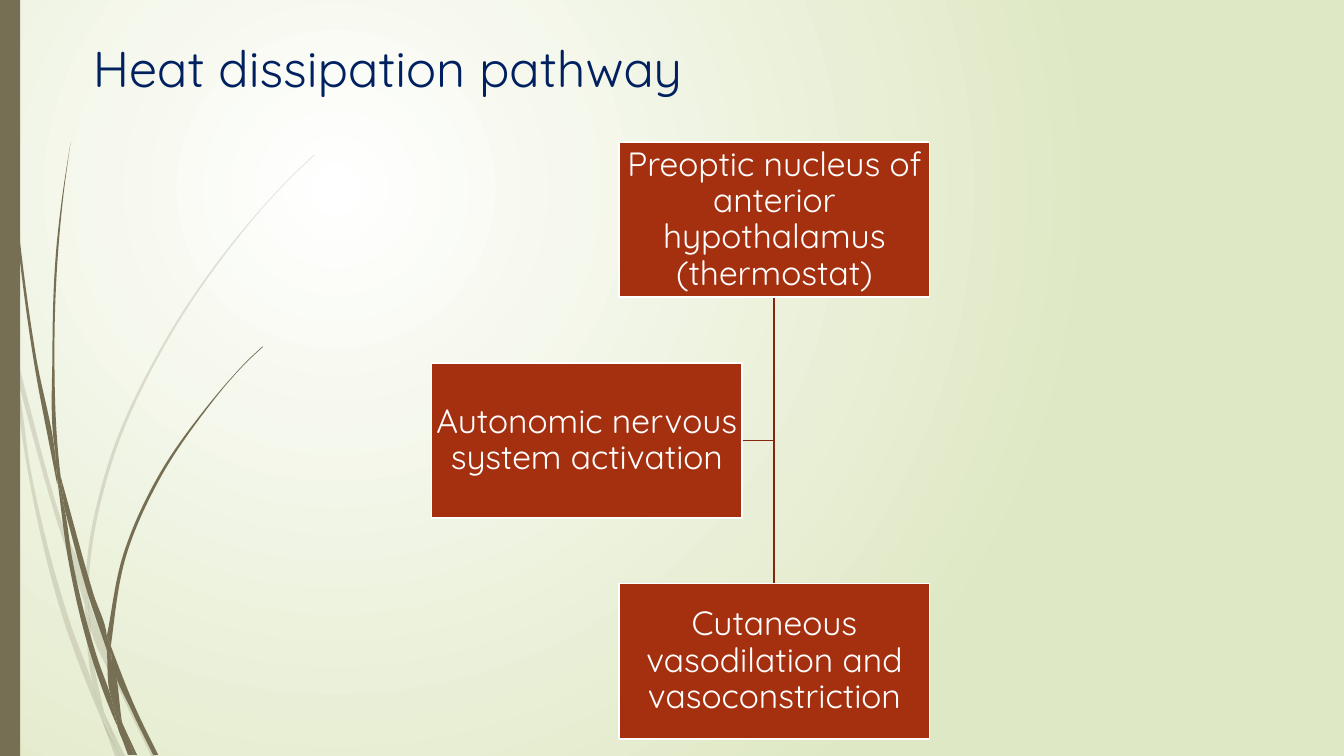
import math

import pptx
import pptx.dml.color
import pptx.enum.shapes
import pptx.enum.text
import pptx.oxml
import pptx.oxml.ns
from pptx.util import Inches, Pt

# Each blade piece is outlined by two smooth edges, one there and one back.
PALE_GRASS = [
    ([(0.11, 3.5), (0.09, 3.22), (0, 2.82)], [(0, 2.99), (0.1, 3.44), (0.11, 3.5)]),
    ([(0.84, 5.99), (0.85, 5.86), (0.62, 5.2), (0.14, 3.45)],
     [(0.17, 3.76), (0.58, 5.22), (0.84, 5.99)]),
    ([(0.88, 5.96), (0.88, 6.1), (1.23, 6.94), (1.5, 7.5)],
     [(1.55, 7.5), (1.27, 6.92), (0.92, 6.07), (0.88, 5.96)]),
    ([(1.19, 7.5), (1.24, 7.5)], [(1.05, 7.11), (1.19, 7.5)]),
    ([(0.11, 3.5), (0.28, 4.7), (0.65, 6.21), (0.92, 6.93), (1.01, 7.14)],
     [(0.99, 7.07), (0.93, 6.83), (0.7, 6.19), (0.31, 4.69), (0.17, 3.76), (0.11, 3.5)]),
    ([(0.84, 5.99), (0.87, 6.46), (0.93, 6.83), (0.96, 6.92), (1.05, 7.11)],
     [(1.03, 7.06), (0.91, 6.46), (0.88, 6.1), (0.84, 5.99)]),
    ([(0.88, 5.96), (0.88, 5.84), (1.1, 4.62), (1.6, 3.49), (2.29, 2.45),
      (2.68, 1.98), (2.9, 1.75), (3.12, 1.54)],
     [(3.12, 1.53), (2.89, 1.75), (2.68, 1.97), (2.28, 2.44), (1.58, 3.48),
      (1.07, 4.61), (0.85, 5.84), (0.85, 5.86)]),
    ([(1.01, 7.14), (1.14, 7.5)], [(1.19, 7.5), (1.01, 7.14)]),
    ([(0.88, 6.1), (0.88, 5.96), (0.85, 5.86)], [(0.84, 5.99), (0.88, 6.08)]),
    ([(0.93, 6.83), (0.99, 7.07), (1.01, 7.14), (1.19, 7.5)],
     [(1.19, 7.5), (1.05, 7.11), (0.96, 6.92)]),
]
DARK_GRASS = [
    ([(0.04, 0), (0.05, 0.48), (0.08, 1.09), (0.19, 2.32), (0.36, 3.55),
      (0.55, 4.53), (0.57, 4.81)],
     [(0.56, 4.77), (0.33, 3.55), (0.17, 2.33), (0.07, 1.1), (0.04, 0.48), (0.03, 0)]),
    ([(1.06, 6.45), (1.06, 6.31), (0.93, 5.9), (0.6, 4.72)],
     [(0.64, 5.05), (0.88, 5.92), (1.06, 6.45)]),
    ([(1.1, 6.41), (1.11, 6.56), (1.32, 7.08), (1.52, 7.49)],
     [(1.57, 7.49), (1.36, 7.06), (1.13, 6.49), (1.1, 6.41)]),
    ([(0.57, 4.77), (0.68, 5.57), (0.93, 6.59), (1.11, 7.08), (1.17, 7.22)],
     [(1.16, 7.17), (1.1, 6.91), (0.98, 6.57), (0.72, 5.56), (0.64, 5.05), (0.57, 4.77)]),
    ([(0.6, 4.72), (0.58, 4.53), (0.54, 3.49), (0.58, 2.45), (0.63, 1.93), (0.7, 1.41)],
     [(0.7, 1.41), (0.62, 1.93), (0.56, 2.45), (0.52, 3.49), (0.55, 4.49), (0.6, 4.72)]),
    ([(1.33, 7.49), (1.36, 7.49)], [(1.22, 7.19), (1.33, 7.49)]),
    ([(0.57, 4.77), (0.64, 5.05)], [(0.6, 4.72), (0.55, 4.49), (0.55, 4.53), (0.57, 4.77)]),
    ([(1.1, 6.41), (1.11, 6.33), (1.25, 5.52), (1.58, 4.76), (2.05, 4.06),
      (2.31, 3.74), (2.45, 3.59), (2.61, 3.44)],
     [(2.6, 3.44), (2.45, 3.58), (2.31, 3.73), (2.04, 4.05), (1.56, 4.74),
      (1.22, 5.51), (1.06, 6.31)]),
    ([(1.17, 7.22), (1.27, 7.49)], [(1.31, 7.49), (1.17, 7.22)]),
    ([(1.06, 6.45), (1.1, 6.91), (1.16, 7.06), (1.22, 7.19)],
     [(1.21, 7.16), (1.11, 6.56), (1.09, 6.51), (1.06, 6.45)]),
    ([(1.06, 6.45), (1.09, 6.51), (1.11, 6.56)], [(1.1, 6.41), (1.06, 6.31)]),
    ([(1.1, 6.91), (1.16, 7.17), (1.17, 7.22), (1.3, 7.49)],
     [(1.33, 7.49), (1.22, 7.19), (1.16, 7.06), (1.1, 6.91)]),
]


def color(hex_value):
    return pptx.dml.color.RGBColor.from_string(hex_value)


def element(tag, attributes="", content=""):
    return pptx.oxml.parse_xml(
        f'<a:{tag} {pptx.oxml.ns.nsdecls("a")} {attributes}>{content}</a:{tag}>')


def bezier_segments(edge):
    """Return control, control and end point of each smooth segment along the edge."""
    lengths = [math.dist(a, b) for a, b in zip(edge, edge[1:])]
    slopes = [((b[0] - a[0]) / d, (b[1] - a[1]) / d)
              for a, b, d in zip(edge, edge[1:], lengths)]
    inner = [tuple((u * e + v * d) / (d + e) for u, v in zip(before, after))
             for before, after, d, e in zip(slopes, slopes[1:], lengths, lengths[1:])]
    tangents = [slopes[0], *inner, slopes[-1]]
    return [(tuple(p + t * d / 3 for p, t in zip(start, leave)),
             tuple(p - t * d / 3 for p, t in zip(end, arrive)), end)
            for start, end, leave, arrive, d
            in zip(edge, edge[1:], tangents, tangents[1:], lengths)]


class PathwaySlide:
    FONT = "Quicksand"
    OLIVE, NAVY, RUST, DARK_RUST, WHITE = "766F54", "002060", "A53010", "84260D", "FFFFFF"
    PALE_GREEN = "DFE8C4"
    BOX_WIDTH, BOX_HEIGHT = 3.08, 1.54

    def __init__(self, deck):
        self.page = deck.slides.add_slide(deck.slide_layouts[5])

    def background(self):
        fill = self.page.background.fill
        fill.gradient()
        for stop, shade in zip(fill.gradient_stops, (self.WHITE, self.PALE_GREEN)):
            stop.color.rgb = color(shade)
        linear = self.page.background._cSld.find(".//" + pptx.oxml.ns.qn("a:lin"))
        linear.getparent().replace(linear, element(
            "path", 'path="circle"',
            '<a:fillToRect l="50000" t="50000" r="100000" b="100000"/>'))

    def paint(self, shape, fill=None, line=None):
        shape.shadow.inherit = False
        for part, shade in ((shape.fill, fill), (shape.line.fill, line)):
            if shade:
                part.solid()
                part.fore_color.rgb = color(shade)
            else:
                part.background()
        if line:
            shape.line.width = Pt(1.25)

    def format_text(self, paragraph, size, shade, alignment):
        paragraph.alignment = alignment
        for span in paragraph.runs:
            span.font.name = self.FONT
            span.font.size = Pt(size)
            span.font.color.rgb = color(shade)

    def grass(self, pieces, opacity=100):
        group = self.page.shapes.add_group_shape()
        for there, back in pieces:
            outline = [(Inches(x), Inches(y)) for x, y in there + back]
            builder = group.shapes.build_freeform(*outline[0])
            builder.add_line_segments(outline[1:], close=True)
            piece = builder.convert_to_shape()
            self.paint(piece, self.OLIVE)
            self.curve(piece, [*bezier_segments(there), None, *bezier_segments(back)])
            if opacity < 100:
                shade = piece._element.spPr.find(".//" + pptx.oxml.ns.qn("a:srgbClr"))
                shade.append(element("alpha", f'val="{opacity * 1000}"'))

    def curve(self, piece, segments):
        """Bend the straight segments of a piece, leaving those marked None."""
        straight = piece._element.findall(".//" + pptx.oxml.ns.qn("a:lnTo"))
        for line, segment in zip(straight, segments):
            if segment:
                points = "".join(
                    f'<a:pt x="{Inches(x) - piece.left}" y="{Inches(y) - piece.top}"/>'
                    for x, y in segment)
                line.getparent().replace(line, element("cubicBezTo", "", points))

    def rectangle(self, left, top, width, height, fill, line=None):
        shape = self.page.shapes.add_shape(
            pptx.enum.shapes.MSO_SHAPE.RECTANGLE,
            Inches(left), Inches(top), Inches(width), Inches(height))
        self.paint(shape, fill, line)
        return shape

    def title(self, text):
        title = self.page.shapes.title
        title.left, title.top = Inches(0.82), Inches(0.32)
        title.width, title.height = Inches(11.33), Inches(0.73)
        frame = title.text_frame
        frame.text = text
        frame.auto_size = pptx.enum.text.MSO_AUTO_SIZE.NONE
        frame.vertical_anchor = pptx.enum.text.MSO_ANCHOR.TOP
        self.format_text(frame.paragraphs[0], 36, self.NAVY, pptx.enum.text.PP_ALIGN.LEFT)

    def box(self, left, top, text):
        box = self.rectangle(left, top, self.BOX_WIDTH, self.BOX_HEIGHT, self.RUST, self.WHITE)
        frame = box.text_frame
        frame.text = text
        frame.word_wrap = True
        frame.vertical_anchor = pptx.enum.text.MSO_ANCHOR.MIDDLE
        frame.margin_left = frame.margin_right = Inches(0.02)
        frame.margin_top = frame.margin_bottom = Inches(0.02)
        frame.paragraphs[0].line_spacing = 0.9
        self.format_text(frame.paragraphs[0], 24, self.WHITE, pptx.enum.text.PP_ALIGN.CENTER)

    def route(self, points, margin=0):
        """Draw an open line, its frame widened by the margin on both sides."""
        (x, y), *rest = [(Inches(x), Inches(y)) for x, y in points]
        builder = self.page.shapes.build_freeform(x - Inches(margin), y)
        if margin:
            builder.move_to(x + Inches(margin), y).move_to(x, y)
        builder.add_line_segments(rest, close=False)
        self.paint(builder.convert_to_shape(), line=self.DARK_RUST)


def main():
    deck = pptx.Presentation()
    deck.slide_width, deck.slide_height = Inches(13.33), Inches(7.5)
    slide = PathwaySlide(deck)
    slide.background()
    slide.grass(PALE_GRASS, opacity=20)
    slide.grass(DARK_GRASS)
    slide.rectangle(0, 0, 0.2, 7.5, slide.OLIVE)
    slide.title("Heat dissipation pathway")
    left, side_left, top, step = 6.14, 4.28, 1.41, 2.19
    center, side_right = left + slide.BOX_WIDTH / 2, side_left + slide.BOX_WIDTH
    start, middle = top + slide.BOX_HEIGHT, top + step + slide.BOX_HEIGHT / 2
    slide.route([(center, start), (center, middle), (side_right, middle)])
    slide.route([(center, start), (center, top + 2 * step)], margin=0.05)
    slide.box(left, top, "Preoptic nucleus of anterior hypothalamus (thermostat)")
    slide.box(left, top + 2 * step, "Cutaneous vasodilation and vasoconstriction")
    slide.box(side_left, top + step, "Autonomic nervous system activation")
    deck.save("out.pptx")


if __name__ == "__main__":
    main()
